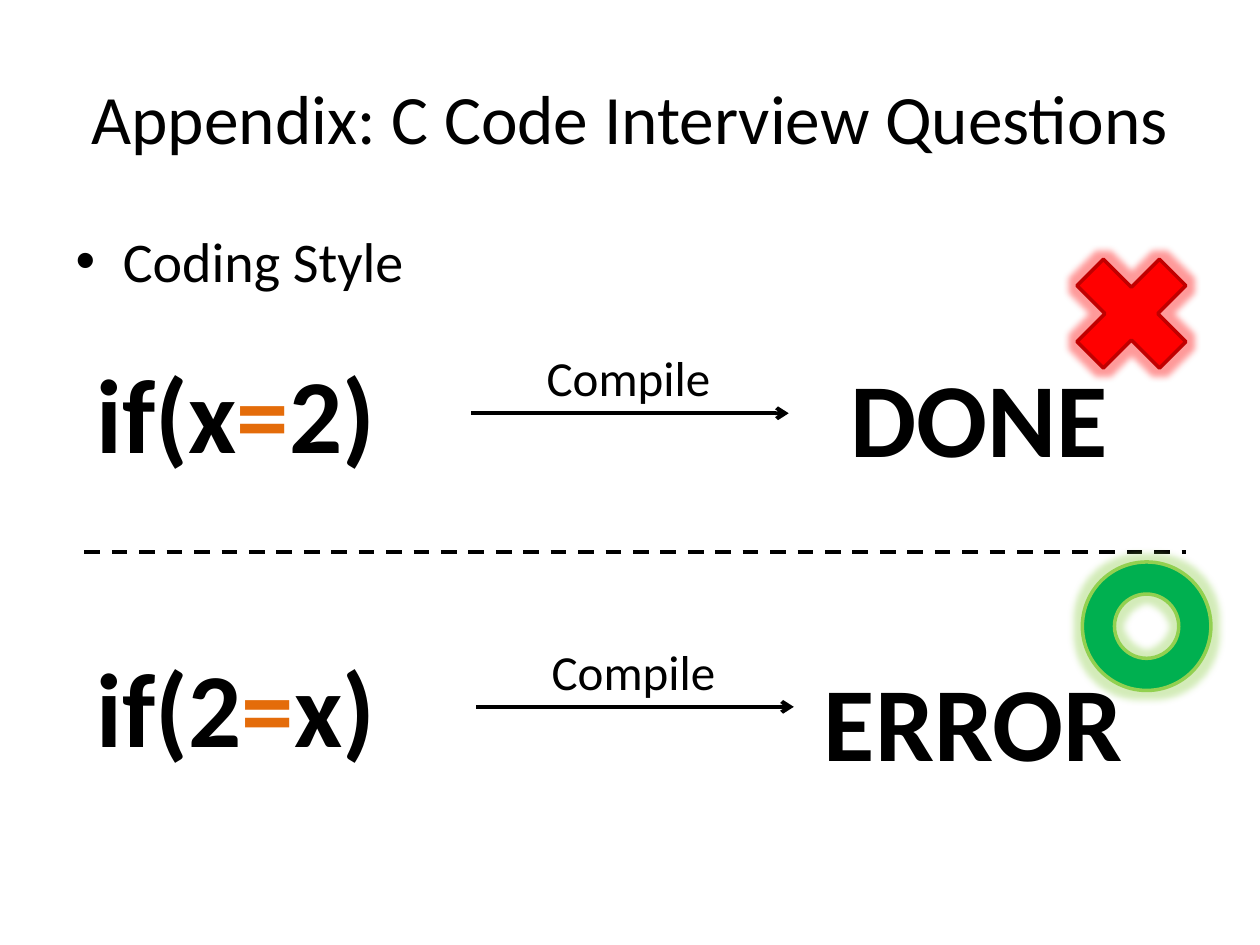
from pptx import Presentation
from pptx.dml.color import RGBColor
from pptx.enum.dml import MSO_LINE
from pptx.enum.shapes import MSO_CONNECTOR, MSO_SHAPE
from pptx.enum.text import MSO_ANCHOR, PP_ALIGN
from pptx.oxml.ns import qn
from pptx.util import Pt
from lxml.etree import SubElement as Sub

PX = 9144  # 100 px to the inch
BLACK = RGBColor(0x00, 0x00, 0x00)
ORANGE = RGBColor(0xE4, 0x6C, 0x0A)
RED = RGBColor(0xFF, 0x00, 0x00)
MAROON = RGBColor(0xC0, 0x00, 0x00)
GREEN = RGBColor(0x00, 0xB0, 0x50)
LIME = RGBColor(0x92, 0xD0, 0x50)


def emu(*px):
    return [n * PX for n in px]


def style(para, size, bold=False):
    font = para.font
    font.name, font.size, font.bold = "Calibri", Pt(size), bold
    font.color.rgb = BLACK


def fill_holder(holder, box, text, size):
    holder.left, holder.top, holder.width, holder.height = emu(*box)
    holder.text_frame.text = text
    para = holder.text_frame.paragraphs[0]
    style(para, size)
    return para


def add_text(slide, box, parts, size, bold=False, wrap=True):
    """Write parts in one line, with each "=" in orange."""
    frame = slide.shapes.add_textbox(*emu(*box)).text_frame
    frame.word_wrap = wrap
    para = frame.paragraphs[0]
    style(para, size, bold)
    for part in parts:
        run = para.add_run()
        run.text = part
        if part == "=":
            run.font.color.rgb = ORANGE


def add_line(slide, x, y, width, dash=None, arrow=False):
    line = slide.shapes.add_connector(
        MSO_CONNECTOR.STRAIGHT, *emu(x, y, x + width, y))
    line.line.color.rgb = BLACK
    line.line.width = Pt(2.25)
    if dash:
        line.line.dash_style = dash
    if arrow:
        Sub(line.line._get_or_add_ln(), qn("a:tailEnd"), type="arrow")
    Sub(line._element.spPr, qn("a:effectLst"))


def add_mark(slide, kind, box, fill, edge, glow):
    mark = slide.shapes.add_shape(kind, *emu(*box))
    mark.fill.solid()
    mark.fill.fore_color.rgb = fill
    mark.line.color.rgb = edge
    mark.line.width = Pt(2)
    mark.shadow.inherit = False
    effects = mark._element.spPr.find(qn("a:effectLst"))
    halo = Sub(effects, qn("a:glow"), rad=str(Pt(8)))
    color = Sub(halo, qn("a:srgbClr"), val=str(glow))
    Sub(color, qn("a:alpha"), val="40000")
    return mark


def add_case(slide, top, code, shift, result, place):
    """One row: code, compile arrow, result; place is relative to top."""
    add_text(slide, (67, top + 1, 307, 111), code, 60, bold=True)
    add_line(slide, 374 + shift, top + 57, 252, arrow=True)
    add_text(slide, (424 + shift, top, 151, 57), ["Compile"], 28, wrap=False)
    x, y, width = place
    add_text(slide, (x, top + y, width, 111), [result], 60, bold=True)


def main():
    deck = Presentation()
    deck.slide_width, deck.slide_height = emu(1000, 750)
    slide = deck.slides.add_slide(deck.slide_layouts[1])

    # Title and topic
    title, body = slide.placeholders
    para = fill_holder(title, (50, 30, 900, 125),
                       "Appendix: C Code Interview Questions", 39.6)
    para.alignment = PP_ALIGN.CENTER
    title.text_frame.vertical_anchor = MSO_ANCHOR.MIDDLE
    fill_holder(body, (50, 175, 900, 495), "Coding Style", 32)

    # Two cases, parted by a dashed line
    add_case(slide, 271, ["if(x", "=", "2)"], 0, "DONE", (665, 4, 233))
    add_line(slide, 67, 438, 874, dash=MSO_LINE.DASH)
    add_case(slide, 504, ["if(2", "=", "x)"], 4, "ERROR", (644, 12, 275))

    # Verdicts
    add_mark(slide, MSO_SHAPE.MATH_MULTIPLY, (835, 186, 126, 126),
             RED, MAROON, RED)
    add_mark(slide, MSO_SHAPE.DONUT, (859, 446, 102, 102),
             GREEN, LIME, LIME)

    deck.save("out.pptx")


if __name__ == "__main__":
    main()
